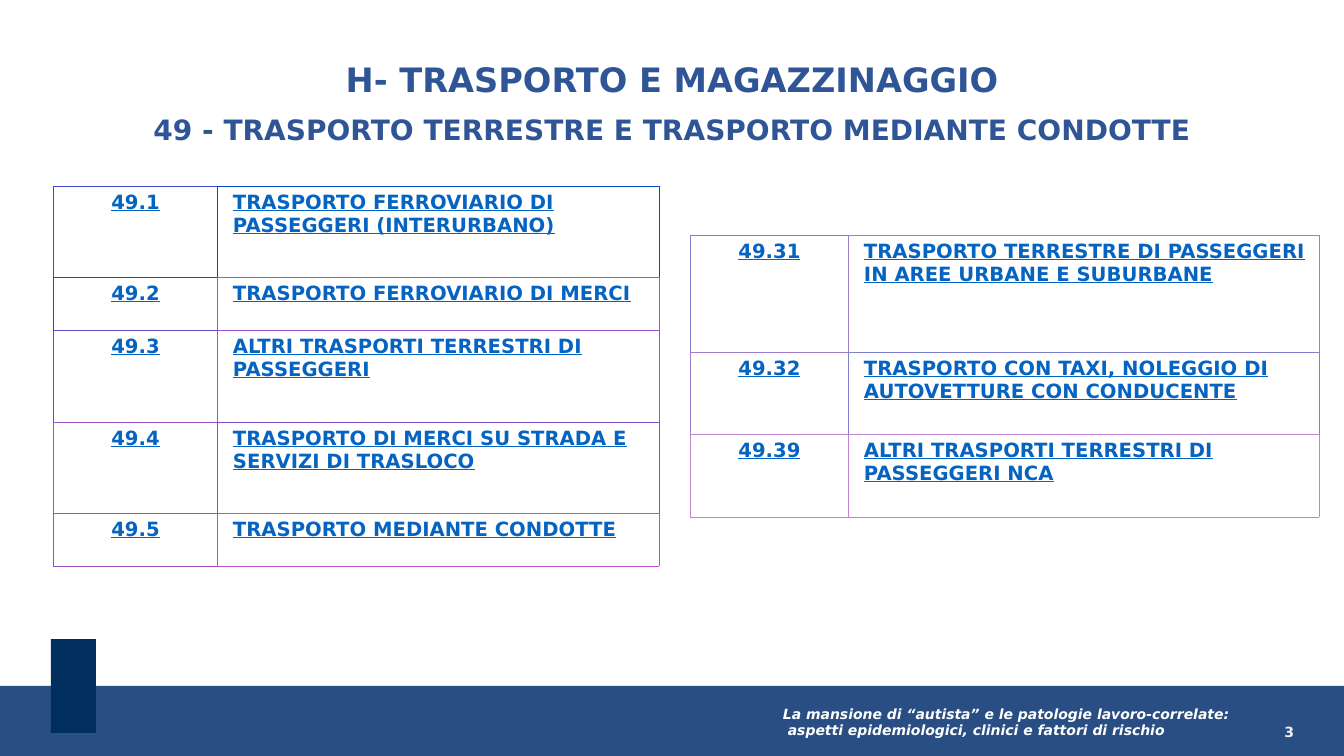
from lxml.etree import SubElement
from pptx import Presentation
from pptx.dml.color import RGBColor
from pptx.enum.shapes import MSO_SHAPE
from pptx.enum.text import MSO_ANCHOR, MSO_AUTO_SIZE, PP_ALIGN
from pptx.oxml import parse_xml
from pptx.oxml.ns import nsdecls, qn
from pptx.util import Pt

WHITE = RGBColor(0xFF, 0xFF, 0xFF)
PALE = RGBColor(0xF2, 0xF2, 0xF2)
BAND = RGBColor(0x28, 0x4E, 0x83)
NAVY = RGBColor(0x00, 0x2E, 0x5D)
TITLE = RGBColor(0x2F, 0x55, 0x97)
LINK = RGBColor(0x05, 0x63, 0xC1)
FONT = "DejaVu Sans"

HEADINGS = [("H- TRASPORTO E MAGAZZINAGGIO", 24, 6),
            ("49 - TRASPORTO TERRESTRE E TRASPORTO MEDIANTE CONDOTTE", 20, 0)]
FOOTER = ["La mansione di “autista” e le patologie lavoro-correlate:",
          " aspetti epidemiologici, clinici e fattori di rischio"]
BARS = [((0, 686, 1344, 70), BAND), ((51, 639, 45, 94), NAVY)]
TABLES = [
    {"left": 53, "top": 186, "cols": [164, 442], "rows": [91, 53, 92, 91, 53],
     "cells": [("49.1", "TRASPORTO FERROVIARIO DI PASSEGGERI (INTERURBANO)"),
               ("49.2", "TRASPORTO FERROVIARIO DI MERCI"),
               ("49.3", "ALTRI TRASPORTI TERRESTRI DI PASSEGGERI"),
               ("49.4", "TRASPORTO DI MERCI SU STRADA E SERVIZI DI TRASLOCO"),
               ("49.5", "TRASPORTO MEDIANTE CONDOTTE")],
     "borders": [("4048C9", "0049C9"), ("2049C9", "C046C9"), ("604BC9", "A050C9"),
                 ("A050C9", "804DC9"), ("A04CC9", "C04FC9")]},
    {"left": 690, "top": 235, "cols": [158, 471], "rows": [117, 82, 83],
     "cells": [("49.31", "TRASPORTO TERRESTRE DI PASSEGGERI IN AREE URBANE E SUBURBANE"),
               ("49.32", "TRASPORTO CON TAXI, NOLEGGIO DI AUTOVETTURE CON CONDUCENTE"),
               ("49.39", "ALTRI TRASPORTI TERRESTRI DI PASSEGGERI NCA")],
     "borders": [("807ECE", "A07ECE"), ("A07ECE", "807ECE"), ("C085CE", "C085CE")]},
]
NO_INSETS = dict.fromkeys(["margin_left", "margin_top", "margin_right", "margin_bottom"], 0)


def px(n):
    return round(n * 914400 / 100.8)


def assign(obj, **values):
    for name, value in values.items():
        setattr(obj, name, value)


def style(font, size, color, **values):
    assign(font, name=FONT, size=Pt(size), bold=True, **values)
    font.color.rgb = color


def place(shape, *box):
    assign(shape, **dict(zip(["left", "top", "width", "height"], map(px, box))))


def border(cell, side, color):
    ln = SubElement(cell._tc.get_or_add_tcPr(), qn("a:ln" + side), w=str(Pt(0.38)))
    SubElement(SubElement(ln, qn("a:solidFill")), qn("a:srgbClr"), val=color)


def add_codes(s, left, top, cols, rows, cells, borders):
    box = map(px, (left, top, sum(cols), sum(rows)))
    table = s.shapes.add_table(len(rows), len(cols), *box).table
    assign(table, first_row=False, horz_banding=False)
    for i, width in enumerate(cols):
        table.columns[i].width = px(width)
    for i, height in enumerate(rows):
        table.rows[i].height = px(height)
        for j, text in enumerate(cells[i]):
            cell = table.cell(i, j)
            own = borders[i][j]
            right = borders[i][min(j + 1, len(cols) - 1)]
            below = borders[min(i + 1, len(rows) - 1)][j]
            for side, color in zip("LRTB", (own, right, own, below)):
                border(cell, side, color)
            cell.fill.solid()
            cell.fill.fore_color.rgb = WHITE
            assign(cell, margin_left=px(16 if j else 11), margin_top=px(5),
                   margin_right=px(10), margin_bottom=px(5))
            p = cell.text_frame.paragraphs[0]
            p.alignment = PP_ALIGN.LEFT if j else PP_ALIGN.CENTER
            r = p.add_run()
            r.text = text
            style(r.font, 14, LINK, underline=True)


def main():
    prs = Presentation()
    assign(prs, slide_width=px(1344), slide_height=px(756))
    prs.element.set("firstSlideNum", "3")
    s = prs.slides.add_slide(prs.slide_layouts[1])
    title, footer = s.placeholders

    for box, color in BARS:
        sp = s.shapes.add_shape(MSO_SHAPE.RECTANGLE, *map(px, box))
        sp.shadow.inherit = False
        sp.fill.solid()
        sp.fill.fore_color.rgb = color
        sp.line.fill.background()
        footer._element.addprevious(sp._element)

    place(title, 139, 48, 1066, 100)
    tf = title.text_frame
    assign(tf, word_wrap=True, auto_size=MSO_AUTO_SIZE.SHAPE_TO_FIT_TEXT,
           vertical_anchor=MSO_ANCHOR.TOP)
    tf.text = "\n".join(text for text, _, _ in HEADINGS)
    for p, (_, size, after) in zip(tf.paragraphs, HEADINGS):
        assign(p, alignment=PP_ALIGN.CENTER, line_spacing=1.14, space_after=Pt(after))
        style(p.runs[0].font, size, TITLE)

    place(footer, 783, 705, 458, 34)
    tf = footer.text_frame
    assign(tf, word_wrap=True, auto_size=MSO_AUTO_SIZE.NONE, **NO_INSETS)
    tf.text = "\n".join(FOOTER)
    for p in tf.paragraphs:
        pPr = p._p.get_or_add_pPr()
        pPr.set("marL", "0")
        pPr.set("indent", "0")
        SubElement(pPr, qn("a:buNone"))
        assign(p, alignment=PP_ALIGN.LEFT, space_before=Pt(0))
        style(p.runs[0].font, 10, WHITE, italic=True)

    number = s.shapes.add_textbox(*map(px, (1255, 724, 39, 28)))
    tf = number.text_frame
    assign(tf, word_wrap=True, **NO_INSETS)
    p = tf.paragraphs[0]
    p.alignment = PP_ALIGN.RIGHT
    p._p.append(parse_xml(
        f'<a:fld {nsdecls("a")} id="{{B6F15528-21DE-4FAA-801E-634DDDAF4B2B}}" type="slidenum">'
        f'<a:rPr lang="it-IT" sz="1000" b="1"><a:solidFill><a:srgbClr val="{PALE}"/></a:solidFill>'
        f'<a:latin typeface="{FONT}"/></a:rPr><a:t>3</a:t></a:fld>'))

    for table in TABLES:
        add_codes(s, **table)
    prs.save("out.pptx")


if __name__ == "__main__":
    main()
